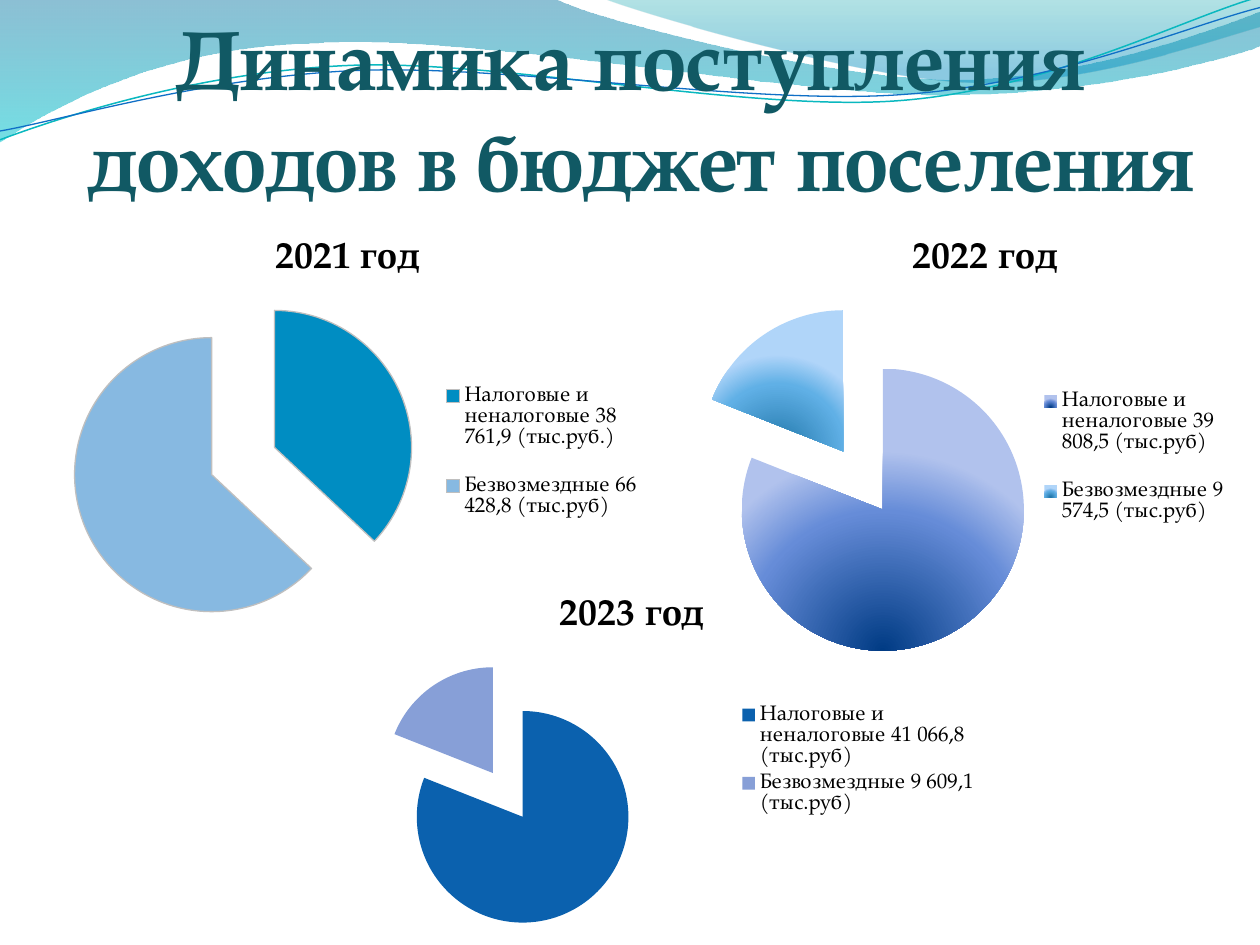
from dataclasses import dataclass

from lxml import etree
from pptx import Presentation, util as u
from pptx.chart.data import CategoryChartData
from pptx.dml.color import RGBColor
from pptx.enum import chart as ch, text
from pptx.oxml import ns, parse_xml

FONT = "TeX Gyre Pagella"
COLS, ROWS = 100, 75
CELL = u.Inches(0.1)
Box = tuple[float, float, float, float]
Point = tuple[float, float]
Stops = list[tuple[int, str, int]]


@dataclass
class Wave:
    start: Point
    segments: list[tuple[float, ...]]
    stops: Stops | None = None
    line: str = ""
    width: float = 0


@dataclass
class Pie:
    year: str
    box: Box
    plot: Box
    legend: Box
    cats: list[str]
    vals: list[int]
    fills: list[str | Stops]
    outline: str = ""
    series: str = "Series 1"
    title_at: Point | None = None


WAVES = [
    Wave((0, 0), [(44, -0.1), (47.6, 1.7, 66.4, 6.3, 75.8, 6.3),
                  (85.3, 6.3, 95.8, 2.6, 100, 0.9), (100.1, 3.6),
                  (98.3, 4.4, 87, 7.6, 74.6, 7.5), (62.2, 7.5, 38.2, 2.8, 25.7, 3.4),
                  (12.9, 3.6, 4.6, 8.3, -0.1, 11.3)],
         [(0, "0074A1", 45), (100, "00C6CF", 55)]),
    Wave((47.9, -0.1), [(50.9, 1.1, 68.2, 6.2, 76.9, 6.5),
                        (85.6, 6.9, 96.1, 3.2, 100, 2.1), (100, 0)],
         [(0, "00A1A9", 30), (80, "008BBF", 45)]),
    Wave((0, 11.1), [(4.8, 9.3, 15.8, 5.7, 27.7, 5.2), (39.5, 4.7, 59.3, 8.9, 71.3, 8),
                     (83.3, 7.1, 93.8, 1.5, 99.8, -0.2)], line="0AB8BF", width=0.85),
    Wave((0, 10.4), [(4.7, 9.6, 16.4, 6.1, 28.3, 5.6), (40.3, 5.1, 59.7, 8.4, 71.7, 7.5),
                     (83.6, 6.7, 94.1, 2.1, 100, 0.6)], line="0F6FC6", width=0.75),
]

PIES = [
    Pie("2021 год", (3.1, 15.6, 49.2, 35.9), (5.7, 23, 27.2, 27.2), (34.75, 28.5, 16.5, 14.7),
        ["Налоговые и неналоговые 38 761,9 (тыс.руб.)", "Безвозмездные 66 428,8 (тыс.руб)"],
        [37, 63], ["008DC2", "87B9E1"], "BFBFBF", "2021 год", (21.3, 18.2)),
    Pie("2022 год", (53.1, 15.6, 46.9, 39), (54.5, 24.15, 28, 28), (82, 28.9, 16, 14.7),
        ["Налоговые и неналоговые 39 808,5 (тыс.руб)", "Безвозмездные 9 574,5 (тыс.руб)"],
        [81, 19], [[(0, "003B84", 100), (70, "668CD8", 100), (100, "B1C2ED", 100)],
                   [(0, "1F75A8", 100), (70, "60B0E6", 100), (100, "B0D5F9", 100)]],
        title_at=(71.9, 18.2)),
    Pie("2023 год", (21.9, 45.4, 56.5, 29.6), (29.8, 52.6, 21, 21), (59.05, 55.5, 18.6, 9.6),
        ["Налоговые и неналоговые 41 066,8 (тыс.руб)", "Безвозмездные 9 609,1 (тыс.руб)"],
        [81, 19], ["0B61AE", "879FD7"]),
]


def rgb(color: str) -> RGBColor:
    return RGBColor.from_string(color)


def emu(*cells: float) -> list[int]:
    return [round(c * CELL) for c in cells]


def apply(obj, values: dict) -> None:
    for name, value in values.items():
        setattr(obj, name, value)


def style_font(font, size: float, color: str, bold: bool = False) -> None:
    apply(font, {"name": FONT, "size": u.Pt(size), "bold": bold})
    font.color.rgb = rgb(color)


def set_gradient(solid, stops: Stops, shade: str) -> None:
    gs = "".join(f'<a:gs pos="{pos * 1000}"><a:srgbClr val="{color}">'
                 f'<a:alpha val="{alpha * 1000}"/></a:srgbClr></a:gs>'
                 for pos, color, alpha in stops)
    grad = parse_xml(f'<a:gradFill {ns.nsdecls("a")} rotWithShape="1">'
                     f'<a:gsLst>{gs}</a:gsLst>{shade}</a:gradFill>')
    solid.getparent().replace(solid, grad)


def bend(sp, segments: list[tuple[float, ...]]) -> None:
    lines = iter(sp._element.findall(f'.//{ns.qn("a:lnTo")}'))
    for seg in segments:
        group = [next(lines) for _ in range(len(seg) // 2)]
        if len(group) == 3:
            cubic = etree.Element(ns.qn("a:cubicBezTo"))
            group[0].addprevious(cubic)
            for ln in group:
                cubic.append(ln[0])
                ln.getparent().remove(ln)


def draw_wave(s, wave: Wave) -> None:
    pts = [emu(*seg[i:i + 2]) for seg in wave.segments for i in range(0, len(seg), 2)]
    fb = s.shapes.build_freeform(*emu(*wave.start))
    fb.add_line_segments(pts, close=bool(wave.stops))
    sp = fb.convert_to_shape()
    bend(sp, wave.segments)
    sp.shadow.inherit = False
    if wave.stops:
        sp.fill.solid()
        sp.fill.fore_color.rgb = rgb(wave.stops[0][1])
        set_gradient(sp._element.spPr.find(ns.qn("a:solidFill")), wave.stops,
                     '<a:lin ang="5400000" scaled="0"/>')
        sp.line.fill.background()
    else:
        sp.fill.background()
        sp.line.color.rgb = rgb(wave.line)
        sp.line.width = u.Pt(wave.width)


def set_layout(parent, after: str, part: tuple[float, ...], box: Box, inner: bool = False) -> None:
    for old in parent.findall(ns.qn("c:layout")):
        parent.remove(old)
    shares = [(part[0] - box[0]) / box[2], (part[1] - box[1]) / box[3]]
    if len(part) == 4:
        shares += [part[2] / box[2], part[3] / box[3]]
    target = '<c:layoutTarget val="inner"/>' if inner else ""
    sizes = "".join(f'<c:{k} val="{v:.4f}"/>' for k, v in zip("xywh", shares))
    layout = parse_xml(f'<c:layout {ns.nsdecls("c")}><c:manualLayout>{target}'
                       f'<c:xMode val="edge"/><c:yMode val="edge"/>{sizes}'
                       '</c:manualLayout></c:layout>')
    if after:
        parent.find(ns.qn(after)).addnext(layout)
    else:
        parent.insert(0, layout)


def draw_pie(s, pie: Pie) -> None:
    data = CategoryChartData()
    data.categories = pie.cats
    data.add_series(pie.series, pie.vals)
    chart = s.shapes.add_chart(ch.XL_CHART_TYPE.PIE, *emu(*pie.box), data).chart
    style_font(chart.font, 18, "000000")
    tf = chart.chart_title.text_frame
    tf.text = pie.year
    style_font(tf.paragraphs[0].runs[0].font, 21.6, "000000", True)
    if pie.title_at:
        set_layout(chart.chart_title._element, "c:tx", pie.title_at, pie.box)
    chart.has_legend = True
    apply(chart.legend, {"position": ch.XL_LEGEND_POSITION.RIGHT, "include_in_layout": False})
    style_font(chart.legend.font, 12, "000000")
    set_layout(chart.legend._element, "c:legendPos", pie.legend, pie.box)
    set_layout(chart._chartSpace.chart.plotArea, "", pie.plot, pie.box, True)
    plot = chart.plots[0]
    plot.vary_by_categories = True
    ser = plot.series[0]
    explosion = etree.Element(ns.qn("c:explosion"), val="25")
    ser._element.find(ns.qn("c:tx")).addnext(explosion)
    for i, fill in enumerate(pie.fills):
        fmt = ser.points[i].format
        fmt.fill.solid()
        fmt.fill.fore_color.rgb = rgb(fill if isinstance(fill, str) else fill[0][1])
        if pie.outline:
            fmt.line.color.rgb = rgb(pie.outline)
            fmt.line.width = u.Pt(0.75)
        else:
            fmt.line.fill.background()
        if not isinstance(fill, str):
            solid = ser._element.findall(ns.qn("c:dPt"))[i].find(
                f'{ns.qn("c:spPr")}/{ns.qn("a:solidFill")}')
            set_gradient(solid, fill, '<a:path path="circle"><a:fillToRect l="50000" '
                                      't="100000" r="50000" b="0"/></a:path>')


def draw_title(s, lines: list[str], box: Box) -> None:
    sp = s.shapes.title
    apply(sp, dict(zip(("left", "top", "width", "height"), emu(*box))))
    tf = sp.text_frame
    tf.text = "\n".join(lines)
    apply(tf, {"word_wrap": False, "auto_size": text.MSO_AUTO_SIZE.SHAPE_TO_FIT_TEXT,
               "vertical_anchor": text.MSO_ANCHOR.TOP})
    for p in tf.paragraphs:
        apply(p, {"alignment": text.PP_ALIGN.CENTER, "space_before": u.Pt(0)})
        r = p.runs[0]
        style_font(r.font, 48, "115964", True)
        r.font._element.insert(0, parse_xml(
            f'<a:ln {ns.nsdecls("a")} w="12700"><a:solidFill>'
            '<a:srgbClr val="00637F"/></a:solidFill></a:ln>'))
    s.shapes._spTree.append(sp._element)


def main() -> None:
    prs = Presentation()
    prs.slide_width, prs.slide_height = COLS * CELL, ROWS * CELL
    s = prs.slides.add_slide(prs.slide_layouts[5])
    for wave in WAVES:
        draw_wave(s, wave)
    for pie in PIES:
        draw_pie(s, pie)
    draw_title(s, ["Динамика поступления ", "доходов в бюджет поселения"], (2, 0, 97.8, 17.2))
    prs.save("out.pptx")


if __name__ == "__main__":
    main()
